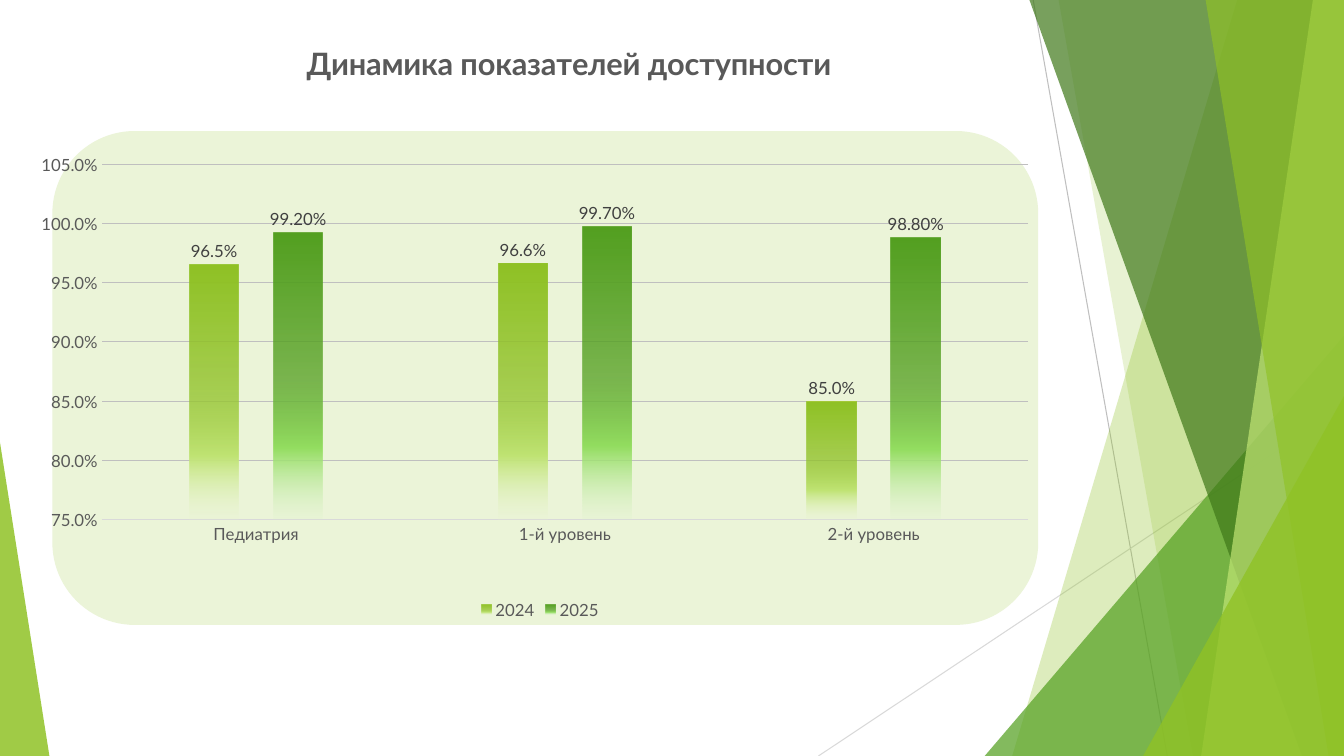
import pptx
import pptx.chart.data
import pptx.dml.color
import pptx.enum.chart
import pptx.enum.shapes
import pptx.oxml
import pptx.oxml.ns
import pptx.util
from lxml import etree

Pt = pptx.util.Pt
qn = pptx.oxml.ns.qn

FONT = "Lato"
TITLE = "Динамика показателей доступности"
CATEGORIES = ["Педиатрия", "1-й уровень", "2-й уровень"]
COLORS = {
    "lime": "90C226", "green": "54A021", "forest": "3F7819", "pale": "C0E474",
    "panel": "EBF4D8", "line": "BFBFBF", "faint": "D9D9D9",
    "text": "595959", "label": "404040", "white": "FFFFFF",
    "bright": "94DE61", "lime_fade": "EAF6D1", "green_fade": "DBF4CA",
}
SERIES = [
    ("2024", (0.965, 0.966, 0.85), "0.0%",
     [(0, "lime", 100), (51, "lime", 75), (75, "pale", 100), (100, "lime_fade", 15)]),
    ("2025", (0.992, 0.997, 0.988), "0.00%",
     [(0, "green", 100), (51, "green", 75), (75, "bright", 100), (100, "green_fade", 15)]),
]
WIDTH, HEIGHT, TOP = 960, 540, -0.7
RAYS = [
    ((738, 0), (833.8, HEIGHT), "line"),
    ((WIDTH, 290.2), (584.6, HEIGHT), "faint"),
]
FACETS = [
    ("band", 884.2, 722.9, "lime", 30),
    ("band", 756, 851.8, "lime", 20),
    ("triangle", (703.4, 239.8, 256.6, 300.2), 1, "green", 72),
    ("band", 735.1, 929.5, "forest", 70),
    ("band", 938.2, 858.2, "pale", 70),
    ("band", 861.1, 949, "lime", 65),
    ("triangle", (816.5, 283, 143.5, 257), 1, "lime", 80),
    ("triangle", (0, 316.1, 35.3, 223.9), 0, "lime", 85),
]
PANEL = (37.4, 93.6, 704.2, 352.8)
CHART = (29.5, 7.9, 712.1, 437.8)
TITLE_PLACE = {"x": 0.26, "y": 0.04}
PLOT_PLACE = {"x": 0.06, "y": 0.25, "w": 0.93, "h": 0.58}


def rgb(name):
    return pptx.dml.color.RGBColor.from_string(COLORS[name])


def format_font(font, size=12, color="text", bold=False):
    font.name = FONT
    font.size = Pt(size)
    font.bold = bold
    font.color.rgb = rgb(color)


def write_text(frame, text, **style):
    paragraph = frame.paragraphs[0]
    run = paragraph.add_run()
    run.text = text
    format_font(run.font, **style)


def paint(shape, color, opacity=100):
    shape.shadow.inherit = False
    shape.fill.solid()
    shape.fill.fore_color.rgb = rgb(color)
    shape.line.fill.background()
    if opacity < 100:
        value = shape.element.spPr.find(qn("a:solidFill"))[0]
        etree.SubElement(value, qn("a:alpha"), val=str(opacity * 1000))


def add_preset(slide, kind, box, color, opacity=100, adjustment=None):
    shape = slide.shapes.add_shape(kind, *map(Pt, box))
    if adjustment is not None:
        shape.adjustments[0] = adjustment
    paint(shape, color, opacity)


def add_ray(slide, start, end, color):
    ray = slide.shapes.add_connector(
        pptx.enum.shapes.MSO_CONNECTOR.STRAIGHT, *map(Pt, start + end))
    ray.line.color.rgb = rgb(color)
    ray.line.width = Pt(0.75)
    etree.SubElement(ray.element.spPr, qn("a:effectLst"))


def add_band(slide, top_x, bottom_x, color, opacity):
    builder = slide.shapes.build_freeform(top_x, TOP, scale=Pt(1))
    builder.add_line_segments([(WIDTH, TOP), (WIDTH, HEIGHT), (bottom_x, HEIGHT)], close=True)
    paint(builder.convert_to_shape(), color, opacity)


def set_layout(parent, position, place, inner=False):
    for old in parent.findall(qn("c:layout")):
        parent.remove(old)
    layout = etree.Element(qn("c:layout"))
    parent.insert(position, layout)
    manual = etree.SubElement(layout, qn("c:manualLayout"))
    if inner:
        etree.SubElement(manual, qn("c:layoutTarget"), val="inner")
    for key in ("x", "y"):
        etree.SubElement(manual, qn(f"c:{key}Mode"), val="edge")
    for key, value in place.items():
        etree.SubElement(manual, qn(f"c:{key}"), val=str(value))


def set_gradient(series_element, stops):
    properties = series_element.find(qn("c:spPr"))
    properties.remove(properties.find(qn("a:solidFill")))
    gradient = etree.Element(qn("a:gradFill"))
    properties.insert(0, gradient)
    stop_list = etree.SubElement(gradient, qn("a:gsLst"))
    for position, color, opacity in stops:
        stop = etree.SubElement(stop_list, qn("a:gs"), pos=str(position * 1000))
        value = etree.SubElement(stop, qn("a:srgbClr"), val=COLORS[color])
        if opacity < 100:
            etree.SubElement(value, qn("a:alpha"), val=str(opacity * 1000))
    etree.SubElement(gradient, qn("a:lin"), ang="5400000", scaled="0")


def add_chart(slide):
    enums = pptx.enum.chart
    data = pptx.chart.data.CategoryChartData()
    data.categories = CATEGORIES
    for name, values, number_format, stops in SERIES:
        data.add_series(name, values, number_format)
    chart = slide.shapes.add_chart(
        enums.XL_CHART_TYPE.COLUMN_CLUSTERED, *map(Pt, CHART), data).chart
    format_font(chart.font)

    chart.has_title = True
    write_text(chart.chart_title.text_frame, TITLE, size=22, bold=True)
    chart.chart_title.include_in_layout = False
    chart.has_legend = True
    chart.legend.position = enums.XL_LEGEND_POSITION.BOTTOM
    chart.legend.include_in_layout = False
    format_font(chart.legend.font)

    plot = chart.plots[0]
    plot.gap_width = 355
    plot.overlap = -70
    plot.vary_by_categories = False
    elements = list(chart.element.iter(qn("c:ser")))
    for series, element, (name, values, number_format, stops) in zip(plot.series, elements, SERIES):
        series.format.fill.solid()
        series.format.fill.fore_color.rgb = rgb(stops[0][1])
        series.format.line.fill.background()
        set_gradient(element, stops)
        labels = series.data_labels
        labels.show_value = True
        labels.number_format = number_format
        labels.number_format_is_linked = False
        labels.position = enums.XL_LABEL_POSITION.OUTSIDE_END
        format_font(labels.font, color="label")

    for axis in (chart.category_axis, chart.value_axis):
        axis.major_tick_mark = axis.minor_tick_mark = enums.XL_TICK_MARK.NONE
        format_font(axis.tick_labels.font)
    chart.category_axis.format.line.color.rgb = rgb("faint")
    chart.category_axis.format.line.width = Pt(0.75)
    axis = chart.value_axis
    axis.minimum_scale, axis.maximum_scale, axis.major_unit = 0.75, 1.05, 0.05
    axis.tick_labels.number_format = "0.0%"
    axis.tick_labels.number_format_is_linked = False
    axis.format.line.fill.background()
    axis.has_major_gridlines = True
    axis.major_gridlines.format.line.color.rgb = rgb("line")
    axis.major_gridlines.format.line.width = Pt(0.75)

    chart_element = chart.element.find(qn("c:chart"))
    set_layout(chart_element.find(qn("c:title")), 1, TITLE_PLACE)
    set_layout(chart_element.find(qn("c:plotArea")), 0, PLOT_PLACE, inner=True)


def main():
    presentation = pptx.Presentation()
    presentation.slide_width, presentation.slide_height = Pt(WIDTH), Pt(HEIGHT)
    slide = presentation.slides.add_slide(presentation.slide_layouts[6])
    slide.background.fill.solid()
    slide.background.fill.fore_color.rgb = rgb("white")
    presets = pptx.enum.shapes.MSO_SHAPE
    for ray in RAYS:
        add_ray(slide, *ray)
    for kind, first, second, color, opacity in FACETS:
        if kind == "band":
            add_band(slide, first, second, color, opacity)
        else:
            add_preset(slide, presets.ISOSCELES_TRIANGLE, first, color, opacity, second)
    add_preset(slide, presets.ROUNDED_RECTANGLE, PANEL, "panel")
    add_chart(slide)
    presentation.save("out.pptx")


if __name__ == "__main__":
    main()
